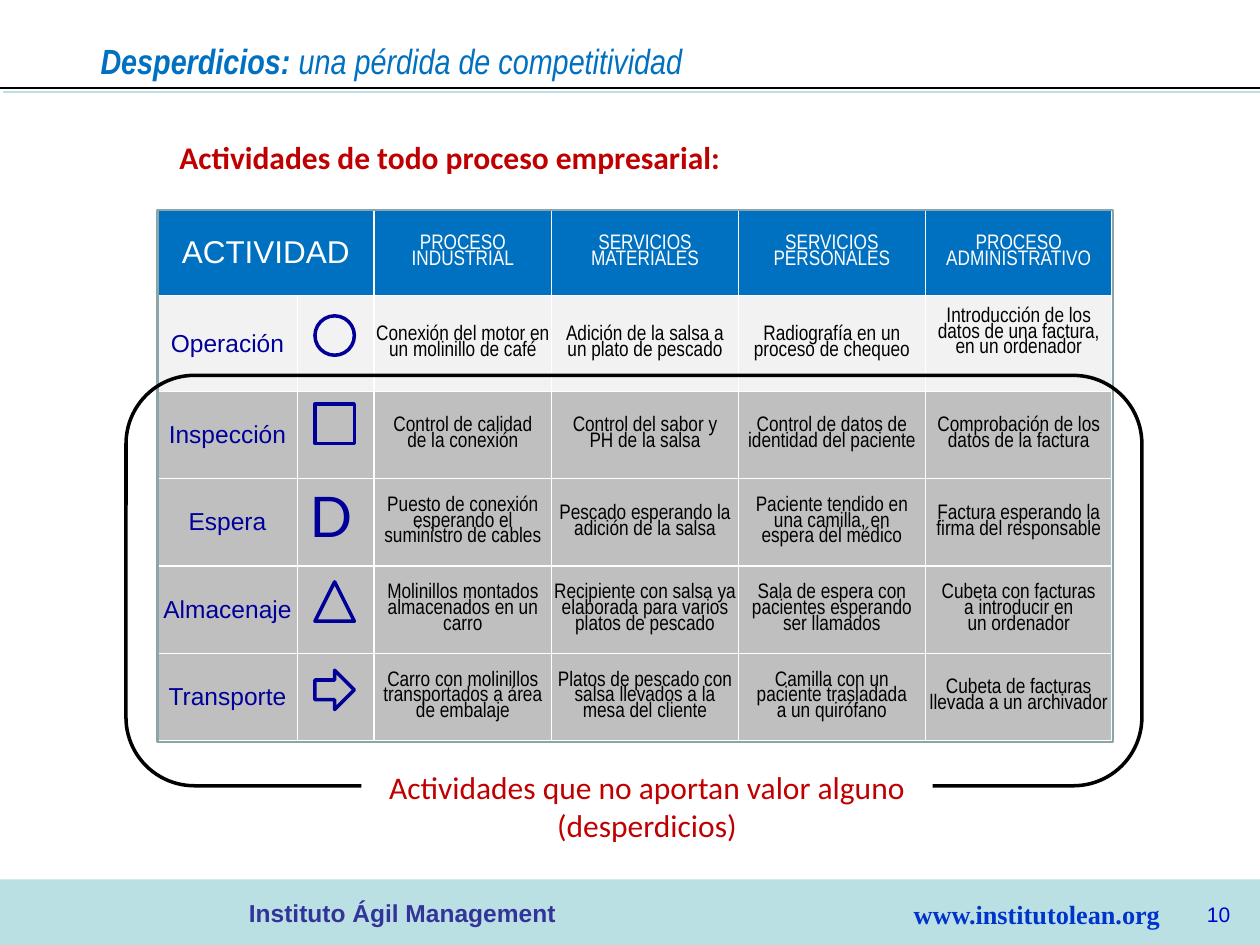
"""Build the slide on the activities of a business process and their waste."""
from lxml import etree
from pptx import Presentation
from pptx import util as u
from pptx.dml.color import RGBColor
from pptx.enum import shapes, text
from pptx.oxml import ns

Pt = u.Pt
KIND = shapes.MSO_SHAPE
ALIGN = text.PP_ALIGN
MID = text.MSO_ANCHOR.MIDDLE

WHITE = RGBColor(0xFF, 0xFF, 0xFF)
BLACK = RGBColor(0, 0, 0)
BLUE = RGBColor(0x00, 0x70, 0xC0)
NAVY = RGBColor(0x00, 0x00, 0x99)
RED = RGBColor(0xC0, 0, 0)
TEAL = RGBColor(0xBB, 0xE0, 0xE3)
STEEL = RGBColor(0x8A, 0xA6, 0xA8)
PALE = RGBColor(0xF2, 0xF2, 0xF2)
GREY = RGBColor(0xBF, 0xBF, 0xBF)
INDIGO = RGBColor(0x33, 0x33, 0x99)
LINK = RGBColor(0x00, 0x33, 0xCC)
PAGE = RGBColor(0, 0, 0xCC)

HEADS = ["PROCESO\nINDUSTRIAL", "SERVICIOS\nMATERIALES",
         "SERVICIOS\nPERSONALES", "PROCESO\nADMINISTRATIVO"]
ROWS = {
    "Operación": ["Conexión del motor en\nun molinillo de café",
                  "Adición de la salsa a\nun plato de pescado",
                  "Radiografía en un proceso de chequeo",
                  "Introducción de los datos de una factura,\nen un ordenador"],
    "Inspección": ["Control de calidad\nde la conexión",
                   "Control del sabor y\nPH de la salsa",
                   "Control de datos de identidad del paciente",
                   "Comprobación de los datos de la factura"],
    "Espera": ["Puesto de conexión esperando el suministro de cables",
               "Pescado esperando la adición de la salsa",
               "Paciente tendido en\nuna camilla, en\nespera del médico",
               "Factura esperando la firma del responsable"],
    "Almacenaje": ["Molinillos montados almacenados en un carro",
                   "Recipiente con salsa ya elaborada para varios platos de pescado",
                   "Sala de espera con pacientes esperando ser llamados",
                   "Cubeta con facturas\na introducir en\nun ordenador"],
    "Transporte": ["Carro con molinillos transportados a área de embalaje",
                   "Platos de pescado con salsa llevados a la mesa del cliente",
                   "Camilla con un\npaciente trasladada\na un quirófano",
                   "Cubeta de facturas llevada a un archivador"],
}
COLS = [80, 43.8, 101.4, 106.8, 106.8, 106.8]
HIGHS = [49, 54.6, 50, 50, 50, 49.6]
ICONS = {KIND.OVAL: 180.5, KIND.RECTANGLE: 231,
         KIND.ISOSCELES_TRIANGLE: 332.5, KIND.RIGHT_ARROW: 383}


class Slide:
    """Hold the style and the current slide."""

    def __init__(self, deck):
        self.page = deck.slides.add_slide(deck.slide_layouts[6])
        self.label = dict(name="Arial", size=Pt(14), color=NAVY)
        self.body = dict(name="Arial Narrow", size=Pt(12), color=BLACK)

    def style(self, font, form):
        for key, val in form.items():
            if key == "color":
                font.color.rgb = val
            else:
                setattr(font, key, val)

    def fill_in(self, frame, lines, form, align=ALIGN.CENTER, lead=None, pad=0):
        frame.word_wrap = True
        for side in ("left", "top", "right", "bottom"):
            setattr(frame, "margin_" + side, Pt(pad))
        for num, line in enumerate(lines.split("\n")):
            para = frame.add_paragraph() if num else frame.paragraphs[0]
            para.alignment = align
            if lead:
                para.line_spacing = lead
            run = para.add_run()
            run.text = line
            self.style(run.font, form)

    def text(self, box, lines, form, align=ALIGN.CENTER, pad=0):
        item = self.page.shapes.add_textbox(*map(Pt, box))
        self.fill_in(item.text_frame, lines, form, align, pad=pad)
        return item.text_frame

    def shape(self, kind, box, fill=None, line=None, width=2):
        item = self.page.shapes.add_shape(kind, *map(Pt, box))
        item.shadow.inherit = False
        for part, tint in ((item.fill, fill), (item.line.fill, line)):
            if tint is None:
                part.background()
            else:
                part.solid()
                part.fore_color.rgb = tint
        if line is not None:
            item.line.width = Pt(width)
        return item

    def rule(self, ends, tint, shade):
        item = self.page.shapes.add_connector(
            shapes.MSO_CONNECTOR.STRAIGHT, *map(Pt, ends))
        item.line.color.rgb = tint
        item.line.width = Pt(1)
        props = item._element.spPr
        glow = etree.SubElement(props, ns.qn("a:effectLst"))
        cast = etree.SubElement(glow, ns.qn("a:outerShdw"), dist=str(Pt(2.8)),
                                dir="2700000", algn="ctr", rotWithShape="0")
        etree.SubElement(cast, ns.qn("a:srgbClr"), val=str(shade))

    def cell(self, cell, fill, lines="", form=None, lead=None):
        props = cell._tc.get_or_add_tcPr()
        for side in "LRTB":
            edge = etree.SubElement(props, ns.qn("a:ln" + side), w=str(Pt(1)))
            solid = etree.SubElement(edge, ns.qn("a:solidFill"))
            etree.SubElement(solid, ns.qn("a:srgbClr"), val=str(WHITE))
        cell.fill.solid()
        cell.fill.fore_color.rgb = fill
        cell.vertical_anchor = MID
        for side in ("left", "top", "right", "bottom"):
            setattr(cell, "margin_" + side, 0)
        if lines:
            self.fill_in(cell.text_frame, lines, form, lead=lead)

    def table(self, left, top):
        grid = self.page.shapes.add_table(
            len(HIGHS), len(COLS), Pt(left), Pt(top),
            Pt(sum(COLS)), Pt(sum(HIGHS))).table
        for col, wide in zip(grid.columns, COLS):
            col.width = Pt(wide)
        for row, high in zip(grid.rows, HIGHS):
            row.height = Pt(high)
        grid.cell(0, 0).merge(grid.cell(0, 1))
        big = {**self.label, "size": Pt(18), "color": WHITE}
        self.cell(grid.cell(0, 0), BLUE, "ACTIVIDAD", big)
        for col, head in enumerate(HEADS, 2):
            self.cell(grid.cell(0, col), BLUE, head,
                      {**self.body, "color": WHITE}, 0.8)
        for row, (name, items) in enumerate(ROWS.items(), 1):
            fill = PALE if row == 1 else GREY
            self.cell(grid.cell(row, 0), fill, name, self.label)
            self.cell(grid.cell(row, 1), fill)
            for col, item in enumerate(items, 2):
                self.cell(grid.cell(row, col), fill, item, self.body, 0.8)
        grid.cell(1, 5).margin_bottom = Pt(11.5)


def main():
    deck = Presentation()
    deck.slide_width, deck.slide_height = Pt(720), Pt(540)
    one = Slide(deck)

    one.shape(KIND.RECTANGLE, (0, 502.5, 720, 37.5), TEAL)
    one.text((111, 513, 238, 17), "Instituto Ágil Management",
             dict(name="Arial", size=Pt(14), color=INDIGO, bold=True))
    one.text((513, 513, 159, 18), "www.institutolean.org",
             dict(name="Times New Roman", size=Pt(15), color=LINK, bold=True))
    one.text((660, 511, 47, 22), "10",
             dict(name="Arial", size=Pt(12), color=PAGE), ALIGN.RIGHT, 4)

    one.table(90, 120)
    for kind, top in ICONS.items():
        one.shape(kind, (180, top, 22.5, 22.5), line=NAVY)
    one.text((173, 271, 34, 46), "D",
             dict(name="Lato", size=Pt(32), color=NAVY), ALIGN.LEFT, 4)
    one.shape(KIND.RECTANGLE, (90, 120, 546, 304), line=STEEL, width=1.5)
    one.shape(KIND.ROUNDED_RECTANGLE, (72, 214.5, 580.5, 234.5), line=BLACK)
    note = one.shape(KIND.RECTANGLE, (206.5, 438.5, 326.5, 44), WHITE)
    red = dict(name="Calibri", size=Pt(18), color=RED)
    one.fill_in(note.text_frame,
                "Actividades que no aportan valor alguno\n(desperdicios)", red)

    slant = dict(name="Arial Narrow", size=Pt(20), color=BLUE, italic=True)
    title = one.text((57.5, 22.5, 628.5, 24.5), "Desperdicios: ",
                     {**slant, "bold": True}, ALIGN.LEFT)
    rest = title.paragraphs[0].add_run()
    rest.text = "una pérdida de competitividad"
    one.style(rest.font, slant)
    one.rule((0, 50.5, 720, 50.5), BLACK, TEAL)
    one.text((95.5, 72, 450, 29), "Actividades de todo proceso empresarial:",
             {**red, "bold": True}, ALIGN.LEFT, 7)
    deck.save("out.pptx")


if __name__ == "__main__":
    main()
